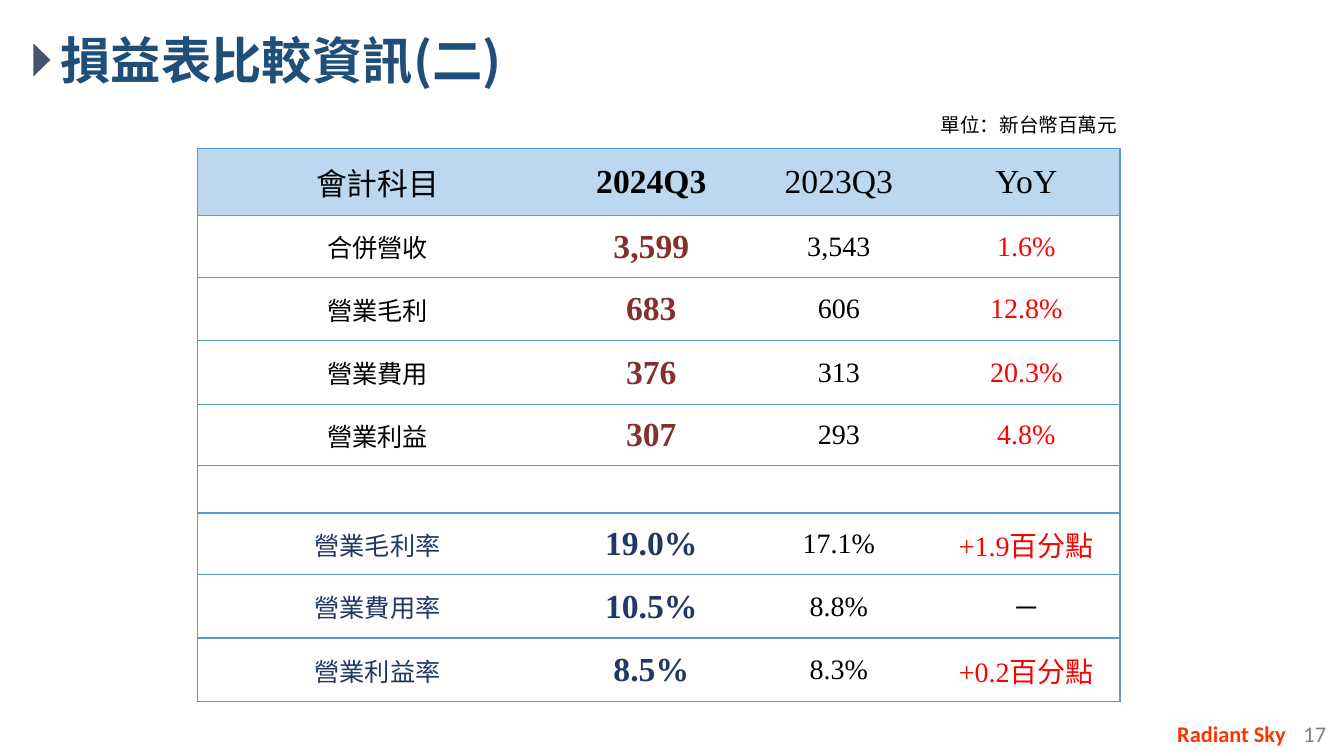
from lxml.etree import SubElement
from pptx import Presentation
from pptx.dml.color import RGBColor
from pptx.enum.shapes import MSO_SHAPE as Shape
from pptx.enum.text import MSO_ANCHOR as Anchor, PP_ALIGN as Align
from pptx.oxml import parse_xml
from pptx.oxml.ns import nsdecls, qn
from pptx.util import Inches, Pt

CJK = "Noto Sans CJK SC"
SERIF = "Times New Roman"
BLACK, RED, MAROON, NAVY = "000000", "FF0000", "86302E", "203864"
RULE, HEADER_FILL, WHITE = "5B9BD5", "BDD7EE", "FFFFFF"

COLUMN_WIDTHS = [3.57, 1.86, 1.86, 1.86]
ROW_HEIGHTS = [0.67, 0.61, 0.63, 0.63, 0.61, 0.47, 0.61, 0.63, 0.63]
HEADER = ["會計科目", "2024Q3", "2023Q3", "YoY"]
AMOUNTS = [
    ["合併營收", "3,599", "3,543", "1.6%"],
    ["營業毛利", "683", "606", "12.8%"],
    ["營業費用", "376", "313", "20.3%"],
    ["營業利益", "307", "293", "4.8%"],
]
RATIOS = [
    ["營業毛利率", "19.0%", "17.1%", "+1.9百分點"],
    ["營業費用率", "10.5%", "8.8%", "─"],
    ["營業利益率", "8.5%", "8.3%", "+0.2百分點"],
]


def color(value):
    return RGBColor.from_string(value)


def add_run(paragraph, text, size, font, fill, bold=False):
    run = paragraph.add_run()
    run.text = text
    run.font.size = Pt(size)
    run.font.name = font
    run.font.bold = bold
    run.font.color.rgb = color(fill)
    east_asian = SubElement(run.font._element, qn("a:ea"))
    east_asian.set("typeface", CJK)


def add_text(slide, box, runs, align=Align.LEFT, wrap=True):
    frame = slide.shapes.add_textbox(*map(Inches, box)).text_frame
    frame.word_wrap = wrap
    paragraph = frame.paragraphs[0]
    paragraph.alignment = align
    for run in runs:
        add_run(paragraph, *run)


def add_title_marker(slide):
    marker = slide.shapes.add_shape(
        Shape.ISOSCELES_TRIANGLE, *map(Inches, (0.25, 0.51, 0.33, 0.17)))
    marker.rotation = 90
    marker.shadow.inherit = False
    marker.fill.solid()
    marker.fill.fore_color.rgb = color("44546A")
    marker.line.fill.background()


def set_borders(cell, visible):
    """Draw the visible sides (letters of LRTB) and hide the others."""
    properties = cell._tc.get_or_add_tcPr()
    for index, side in enumerate("LRTB"):
        if side in visible:
            paint = f'<a:solidFill><a:srgbClr val="{RULE}"/></a:solidFill>'
        else:
            paint = "<a:noFill/>"
        properties.insert(index, parse_xml(
            f'<a:ln{side} {nsdecls("a")} w="{Pt(1)}">{paint}</a:ln{side}>'))


def fill_cell(cell, text, style, background, sides):
    cell.vertical_anchor = Anchor.MIDDLE
    cell.margin_left = cell.margin_right = cell.margin_top = Inches(0.01)
    cell.margin_bottom = 0
    cell.fill.solid()
    cell.fill.fore_color.rgb = color(background)
    set_borders(cell, sides)
    if text:
        paragraph = cell.text_frame.paragraphs[0]
        paragraph.alignment = Align.CENTER
        size, fill, bold = style
        add_run(paragraph, text, size, SERIF, fill, bold)


def body_styles(label_color, current_color):
    return [(18, label_color, False), (24, current_color, True),
            (20, BLACK, False), (20, RED, False)]


def add_income_table(slide):
    header_styles = [(22, BLACK, False), (24, BLACK, True),
                     (24, BLACK, False), (24, BLACK, False)]
    amount_styles = body_styles(BLACK, MAROON)
    ratio_styles = body_styles(NAVY, NAVY)
    rows = [(HEADER, header_styles, HEADER_FILL)]
    rows += [(row, amount_styles, WHITE) for row in AMOUNTS]
    rows += [([""] * len(HEADER), amount_styles, WHITE)]
    rows += [(row, ratio_styles, WHITE) for row in RATIOS]

    table = slide.shapes.add_table(
        len(rows), len(HEADER), Inches(1.96), Inches(1.47),
        Inches(sum(COLUMN_WIDTHS)), Inches(sum(ROW_HEIGHTS))).table
    table.horz_banding = False
    for column, width in zip(table.columns, COLUMN_WIDTHS):
        column.width = Inches(width)
    for row, height in zip(table.rows, ROW_HEIGHTS):
        row.height = Inches(height)

    outer_sides = ["LTB", "TB", "TB", "RTB"]
    for row, (texts, styles, background) in zip(table.rows, rows):
        for cell, text, style, sides in zip(row.cells, texts, styles, outer_sides):
            if text == "─":
                style = (20, BLACK, False)
            fill_cell(cell, text, style, background, sides)


def main():
    deck = Presentation()
    deck.slide_width, deck.slide_height = Inches(13.33), Inches(7.5)
    slide = deck.slides.add_slide(deck.slide_layouts[6])

    # Footer
    add_text(slide, (12.83, 7.1, 0.5, 0.37), [("17", 16, "Calibri", "808080")])
    add_text(slide, (11.35, 7.1, 1.73, 0.37),
             [("Radiant Sky", 16, "Calibri", "FF3300", True)], Align.CENTER)

    # Title
    add_text(slide, (0.5, 0.24, 4.65, 0.71),
             [("損益表比較資訊", 36, "Calibri", "1F4E79", True),
              ("(二)", 36, CJK, "1F4E79", True)])
    add_title_marker(slide)

    # Comparison table and its unit
    add_income_table(slide)
    add_text(slide, (9.23, 1.07, 1.97, 0.34),
             [("單位：新台幣百萬元", 14, CJK, BLACK)], wrap=False)

    deck.save("out.pptx")


if __name__ == "__main__":
    main()
